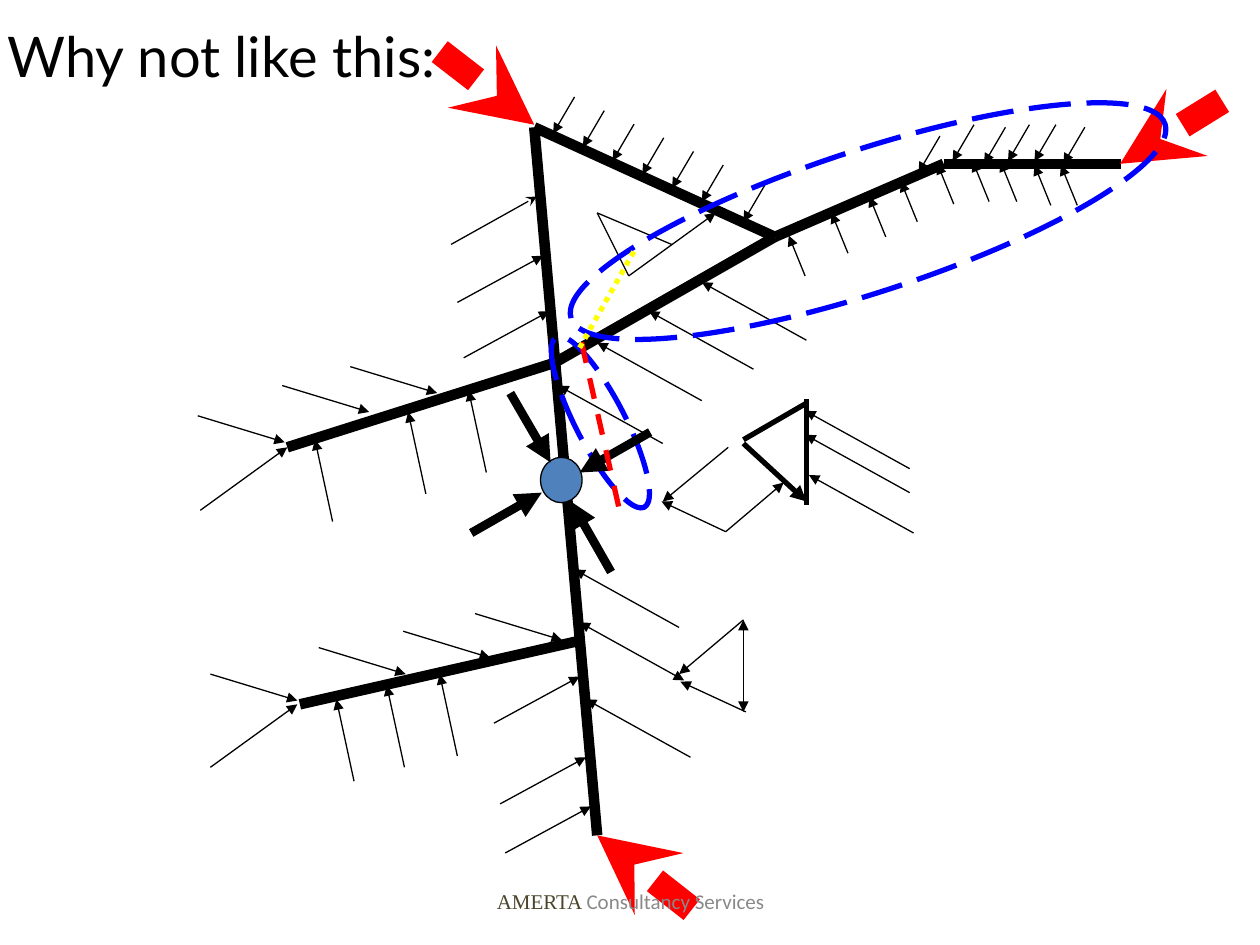
"""Build the slide of a branching frame with loads, joints and force triangles."""
from pptx import Presentation
from pptx.dml.color import RGBColor
from pptx.enum.dml import MSO_LINE
from pptx.enum.shapes import MSO_CONNECTOR, MSO_SHAPE
from pptx.enum.text import MSO_ANCHOR, MSO_AUTO_SIZE, PP_ALIGN
from pptx.oxml.ns import qn
from pptx.util import Inches, Pt
from lxml.etree import SubElement

HUES = {"black": "000000", "red": "FF0000", "blue": "0000FF", "yellow": "FFFF00",
        "joint": "4F81BD", "olive": "4A452A", "grey": "898989"}

deck = Presentation()
deck.slide_width, deck.slide_height = Inches(10), Inches(7.5)
slide = deck.slides.add_slide(deck.slide_layouts[5])
shapes = slide.shapes


def draw(start, end, width=0.75, hue="black", tail=None, head=None, dash=None):
    ends = [Inches(n) for n in (*start, *end)]
    link = shapes.add_connector(MSO_CONNECTOR.STRAIGHT, *ends)
    link.line.width = Pt(width)
    link.line.color.rgb = RGBColor.from_string(HUES[hue])
    if dash:
        link.line.dash_style = dash
    props = link._element.spPr
    for tag, kind in (("a:headEnd", head), ("a:tailEnd", tail)):
        if kind:
            SubElement(props.find(qn("a:ln")), qn(tag)).set("type", kind)
    SubElement(props, qn("a:effectLst"))


def style(run, text, font, size, hue):
    run.text = text
    run.font.name = font
    run.font.size = Pt(size)
    run.font.color.rgb = RGBColor.from_string(HUES[hue])


title = shapes.title
title.left, title.top = Inches(-0.04), Inches(0.12)
title.width, title.height = Inches(8.58), Inches(0.63)
frame = title.text_frame
frame.word_wrap = True
frame.auto_size = MSO_AUTO_SIZE.SHAPE_TO_FIT_TEXT
frame.vertical_anchor = MSO_ANCHOR.TOP
frame.paragraphs[0].alignment = PP_ALIGN.LEFT
style(frame.paragraphs[0].add_run(), "Why not like this:", "Lato", 32, "black")

top, foot, fork = (4.24, 1.01), (4.74, 6.63), (4.4, 2.88)
node, bend = (6.15, 1.88), (7.49, 1.3)
beams = [(top, foot), (fork, (2.28, 3.55)), ((4.58, 5.09), (2.38, 5.59)),
         (fork, node), (top, node), (node, bend), (bend, (8.9, 1.3))]
for start, end in beams:
    draw(start, end, 6)

for start, end in [((3.49, 0.41), (4.24, 0.99)), ((5.49, 7.22), foot),
                   ((9.7, 0.8), (8.89, 1.3))]:
    draw(start, end, 15, "red", "stealth")

roof = [(4.39 + 0.236 * i, 1.06 + 0.108 * i) for i in range(6)]
loads = [
    ((0.83, 0.46), [(4.56, 4.52), (4.65, 5.55), (4.43, 3.06), (4.74, 2.72), (5.15, 2.47),
                    (5.57, 2.24), (6.42, 3.77), (6.39, 3.45), (6.39, 3.26)]),
    ((-0.68, 0.37), [(4.65, 6.01), (4.6, 5.37), (4.69, 6.4), (4.31, 2.03), (4.36, 2.47)]),
    ((0.14, 0.65), [(3.49, 5.35), (3.07, 5.44), (2.67, 5.55), (3.72, 3.1), (3.24, 3.27),
                    (2.5, 3.49)]),
    ((-0.69, -0.21), [(2.93, 3.27), (2.26, 3.51), (3.47, 3.12), (3.22, 5.35), (2.36, 5.56),
                      (3.89, 5.22), (4.46, 5.08)]),
    ((-0.69, 0.5), [(2.36, 5.59), (2.28, 3.55)]),
    ((0.17, -0.29), [(8.44, 1.3), (7.29, 1.37), (7.56, 1.28), (7.81, 1.3), (8, 1.28),
                     (8.21, 1.28), (5.9, 1.76), *roof]),
    ((0.13, 0.32), [(6.9, 1.56), (7.15, 1.44), (7.44, 1.3), (7.72, 1.28), (7.94, 1.28),
                    (8.21, 1.31), (8.42, 1.31), (6.6, 1.69), (6.26, 1.87)]),
]
for (dx, dy), tips in loads:
    for x, y in tips:
        draw((x + dx, y + dy), (x, y), tail="triangle")
draw((3.58, 1.94), (4.26, 1.56), tail="stealth")

for start, end in [((5.78, 3.55), (5.26, 3.98)), ((5.76, 4.22), (5.25, 3.98)),
                   ((5.76, 4.22), (6.22, 3.83)), ((5.9, 4.92), (5.39, 5.35)),
                   ((5.92, 5.65), (5.4, 5.41)), ((4.99, 2.19), (5.68, 1.69))]:
    draw(start, end, tail="triangle")
for start, end in [((4.6, 4.94), (5.43, 5.4)), ((5.9, 4.92), (5.9, 5.65))]:
    draw(start, end, tail="triangle", head="triangle")
for end in [(4.99, 2.19), (5.33, 1.94)]:
    draw((4.74, 1.69), end)
draw((6.4, 3.17), (6.4, 4.01), 3)
draw((6.4, 3.2), (5.9, 3.49), 3)
draw((5.9, 3.52), (6.4, 3.98), 3, tail="triangle")

rings = [((4.29, 3.63, 0.33, 0.36), 0, "black", 0.75, None),
         ((4.57, 2.59, 0.39, 1.52), 332.7, "blue", 3, MSO_LINE.LONG_DASH),
         ((4.41, 1.19, 4.96, 1.13), 341.9, "blue", 3, MSO_LINE.LONG_DASH)]
for place, turn, hue, width, dash in rings:
    ring = shapes.add_shape(MSO_SHAPE.OVAL, *[Inches(n) for n in place])
    ring.shadow.inherit = False
    ring.rotation = turn
    ring.line.color.rgb = RGBColor.from_string(HUES[hue])
    ring.line.width = Pt(width)
    if dash:
        ring.fill.background()
        ring.line.dash_style = dash
    else:
        ring.fill.solid()
        ring.fill.fore_color.rgb = RGBColor.from_string(HUES["joint"])

for start, end in [((3.74, 4.23), (4.3, 3.91)), ((5.16, 3.43), (4.6, 3.75)),
                   ((4.85, 4.54), (4.53, 3.98)), ((4.05, 3.12), (4.37, 3.67))]:
    draw(start, end, 5, tail="triangle")
draw((4.91, 4.02), (4.6, 2.65), 3, "red", dash=MSO_LINE.DASH)
draw((4.6, 2.76), (5.04, 1.98), 3, "yellow", dash=MSO_LINE.ROUND_DOT)

note = shapes.add_textbox(Inches(3.42), Inches(6.95), Inches(3.17), Inches(0.4)).text_frame
note.word_wrap = True
note.vertical_anchor = MSO_ANCHOR.MIDDLE
line = note.paragraphs[0]
line.alignment = PP_ALIGN.CENTER
style(line.add_run(), "AMERTA ", "Times New Roman", 12, "olive")
style(line.add_run(), "Consultancy Services", "Calibri", 12, "grey")

deck.save("out.pptx")
